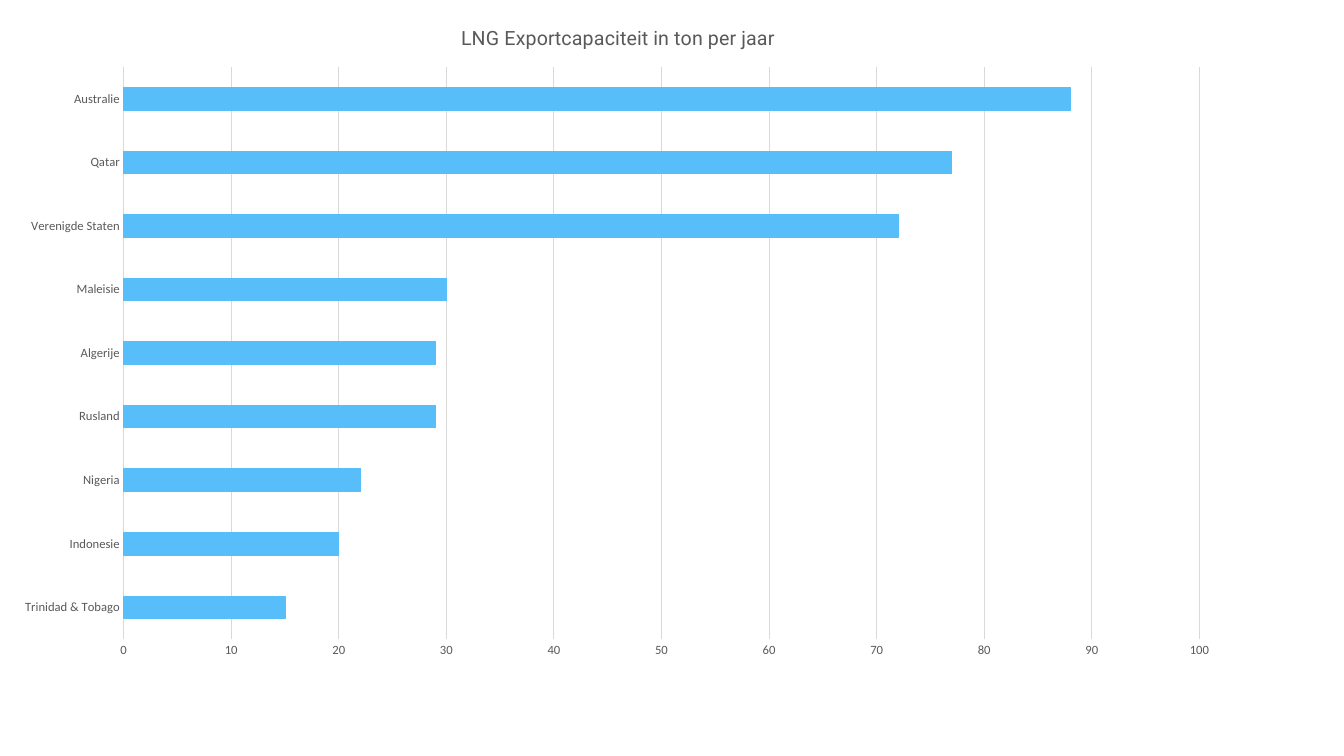
from dataclasses import dataclass

from lxml.etree import SubElement, Element
from pptx import Presentation
from pptx.chart.data import CategoryChartData
from pptx.dml.color import RGBColor as RGB
from pptx.enum.chart import XL_CHART_TYPE as ChartType, XL_TICK_MARK as Tick
from pptx.oxml.ns import qn
from pptx.util import Inches, Pt


@dataclass(frozen=True)
class Theme:
    bar: RGB = RGB(0x57, 0xBE, 0xF9)
    grid: RGB = RGB(0xD9, 0xD9, 0xD9)
    text: RGB = RGB(0x59, 0x59, 0x59)
    base: RGB = RGB(0, 0, 0)
    body_font: str = "Calibri"
    title_font: str = "Roboto"
    title_size: float = 14
    base_size: float = 10
    axis_size: float = 9
    line: float = 0.75


CAPACITY = {
    "Trinidad & Tobago": 15,
    "Indonesie": 20,
    "Nigeria": 22,
    "Rusland": 29,
    "Algerije": 29,
    "Maleisie": 30,
    "Verenigde Staten": 72,
    "Qatar": 77,
    "Australie": 88,
}


def style_font(font, name, size, color, bold=False):
    font.name, font.size, font.bold = name, Pt(size), bold
    font.color.rgb = color


def add_text(tf, text, **fmt):
    r = tf.paragraphs[0].add_run()
    r.text = text
    style_font(r.font, **fmt)


def make_layout(target=None, **shares):
    layout = Element(qn("c:layout"))
    manual = SubElement(layout, qn("c:manualLayout"))
    if target:
        SubElement(manual, qn("c:layoutTarget")).set("val", target)
    for key in ("x", "y"):
        SubElement(manual, qn(f"c:{key}Mode")).set("val", "edge")
    for key, share in shares.items():
        SubElement(manual, qn(f"c:{key}")).set("val", str(share))
    return layout


def place_after(anchor, layout):
    parent = anchor.getparent()
    for old in parent.findall(qn("c:layout")):
        parent.remove(old)
    anchor.addnext(layout)


class Deck:
    def __init__(self, theme, width, height):
        self.theme = theme
        self.prs = Presentation()
        self.prs.slide_width, self.prs.slide_height = Inches(width), Inches(height)
        self.s = self.prs.slides.add_slide(self.prs.slide_layouts[6])

    def bar_chart(self, values, title, width, height):
        t = self.theme
        data = CategoryChartData()
        data.categories = list(values)
        data.add_series("Series 1", list(values.values()))
        frame = self.s.shapes.add_chart(
            ChartType.BAR_CLUSTERED, 0, 0,
            int(self.prs.slide_width * width), int(self.prs.slide_height * height), data)
        chart = frame.chart
        chart.has_legend = False
        style_font(chart.font, t.body_font, t.base_size, t.base)
        self.title(chart, title)
        self.bars(chart.plots[0])
        self.axes(chart)
        area = chart.plots[0]._element.getparent()
        for old in area.findall(qn("c:layout")):
            area.remove(old)
        area.insert(0, make_layout("inner", x=0.1, y=0.1, w=0.87, h=0.85))

    def title(self, chart, text):
        t = self.theme
        chart.has_title = True
        title = chart.chart_title
        add_text(title.text_frame, text, name=t.title_font, size=t.title_size, color=t.text)
        title.include_in_layout = False
        place_after(title._element.find(qn("c:tx")), make_layout(x=0.37, y=0.03))

    def bars(self, plot):
        t = self.theme
        plot.gap_width = 182
        plot.vary_by_categories = False
        fmt = plot.series[0].format
        fmt.fill.solid()
        fmt.fill.fore_color.rgb = t.bar
        self.line(fmt.line, t.bar)

    def axes(self, chart):
        t = self.theme
        cat, val = chart.category_axis, chart.value_axis
        for axis in (cat, val):
            axis.major_tick_mark = axis.minor_tick_mark = Tick.NONE
            style_font(axis.tick_labels.font, t.body_font, t.axis_size, t.text)
        self.line(cat.format.line, t.grid)
        val.format.line.fill.background()
        val.has_major_gridlines = True
        self.line(val.major_gridlines.format.line, t.grid)
        val.minimum_scale, val.maximum_scale, val.major_unit = 0, 100, 10

    def line(self, line, color):
        line.color.rgb = color
        line.width = Pt(self.theme.line)


def main():
    deck = Deck(Theme(), 13.33, 7.5)
    deck.bar_chart(CAPACITY, "LNG Exportcapaciteit in ton per jaar", 0.92, 0.89)
    deck.prs.save("out.pptx")


if __name__ == "__main__":
    main()
